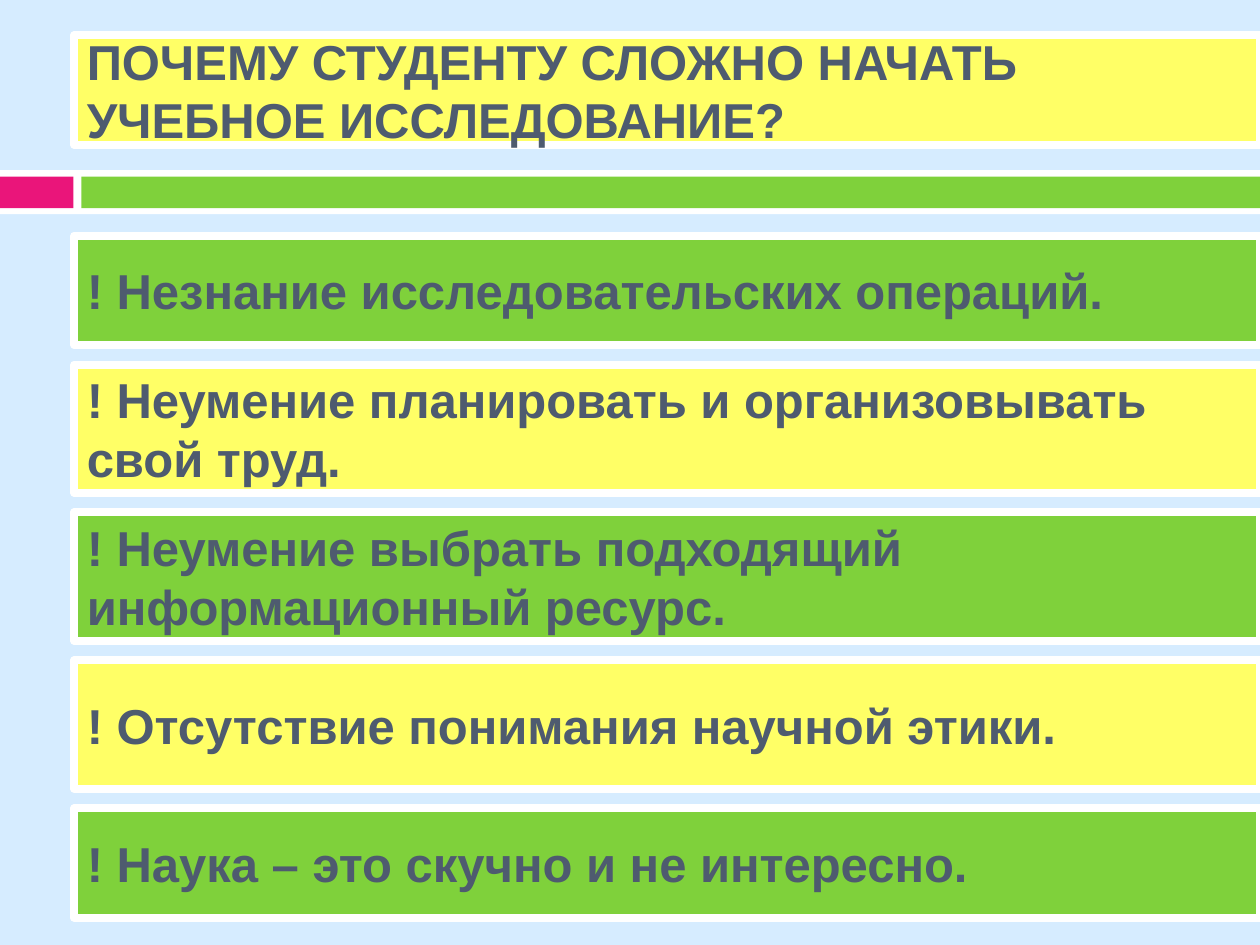
import pptx
import pptx.util
import pptx.dml.color
import pptx.enum.shapes
import pptx.enum.text
from pptx.util import Cm

SLIDE_WIDTH, SLIDE_HEIGHT = 25.4, 19.05
WHITE, PINK, GREEN, YELLOW = "FFFFFF", "EA157A", "7FD13B", "FFFF66"
BACKGROUND, TEXT = "D6ECFF", "4E5B6F"


def color(hex_string):
    return pptx.dml.color.RGBColor.from_string(hex_string)


class SlideBuilder:
    font_name = "Arial"
    font_size = 28
    border_width = 4.5

    def __init__(self, slide):
        self.slide = slide

    def background(self, fill):
        self.slide.background.fill.solid()
        self.slide.background.fill.fore_color.rgb = color(fill)

    def block(self, left, top, width, height, fill):
        shape = self.slide.shapes.add_shape(
            pptx.enum.shapes.MSO_SHAPE.RECTANGLE,
            Cm(left), Cm(top), Cm(width), Cm(height))
        shape.shadow.inherit = False
        shape.fill.solid()
        shape.fill.fore_color.rgb = color(fill)
        shape.line.fill.background()
        return shape

    def text_panel(self, left, top, width, height, fill, text):
        shape = self.block(left, top, width, height, fill)
        shape.line.color.rgb = color(WHITE)
        shape.line.width = pptx.util.Pt(self.border_width)
        text_frame = shape.text_frame
        text_frame.word_wrap = True
        text_frame.vertical_anchor = pptx.enum.text.MSO_ANCHOR.MIDDLE
        text_frame.text = text
        paragraph = text_frame.paragraphs[0]
        paragraph.alignment = pptx.enum.text.PP_ALIGN.LEFT
        font = paragraph.runs[0].font
        font.name = self.font_name
        font.size = pptx.util.Pt(self.font_size)
        font.bold = True
        font.color.rgb = color(TEXT)


def main():
    presentation = pptx.Presentation()
    presentation.slide_width = Cm(SLIDE_WIDTH)
    presentation.slide_height = Cm(SLIDE_HEIGHT)
    builder = SlideBuilder(presentation.slides.add_slide(presentation.slide_layouts[6]))
    builder.background(BACKGROUND)

    # Divider band below the title
    builder.block(0, 3.43, SLIDE_WIDTH, 0.89, WHITE)
    builder.block(0, 3.56, 1.48, 0.64, PINK)
    builder.block(1.64, 3.56, SLIDE_WIDTH - 1.64, 0.64, GREEN)

    # Title
    left = 1.5
    width = SLIDE_WIDTH - left
    low, high = 2.21, 2.59
    builder.text_panel(left, 0.71, width, low, YELLOW,
                       "ПОЧЕМУ СТУДЕНТУ СЛОЖНО НАЧАТЬ УЧЕБНОЕ ИССЛЕДОВАНИЕ?")

    # Reasons, stacked with equal gaps
    reasons = [
        (low, GREEN, "! Незнание исследовательских операций."),
        (high, YELLOW, "! Неумение планировать и организовывать свой труд."),
        (high, GREEN, "! Неумение выбрать подходящий информационный ресурс."),
        (high, YELLOW, "! Отсутствие понимания научной этики."),
        (low, GREEN, "! Наука – это скучно и не интересно."),
    ]
    top, gap = 4.75, 0.39
    for height, fill, text in reasons:
        builder.text_panel(left, top, width, height, fill, text)
        top += height + gap

    presentation.save("out.pptx")


if __name__ == "__main__":
    main()
